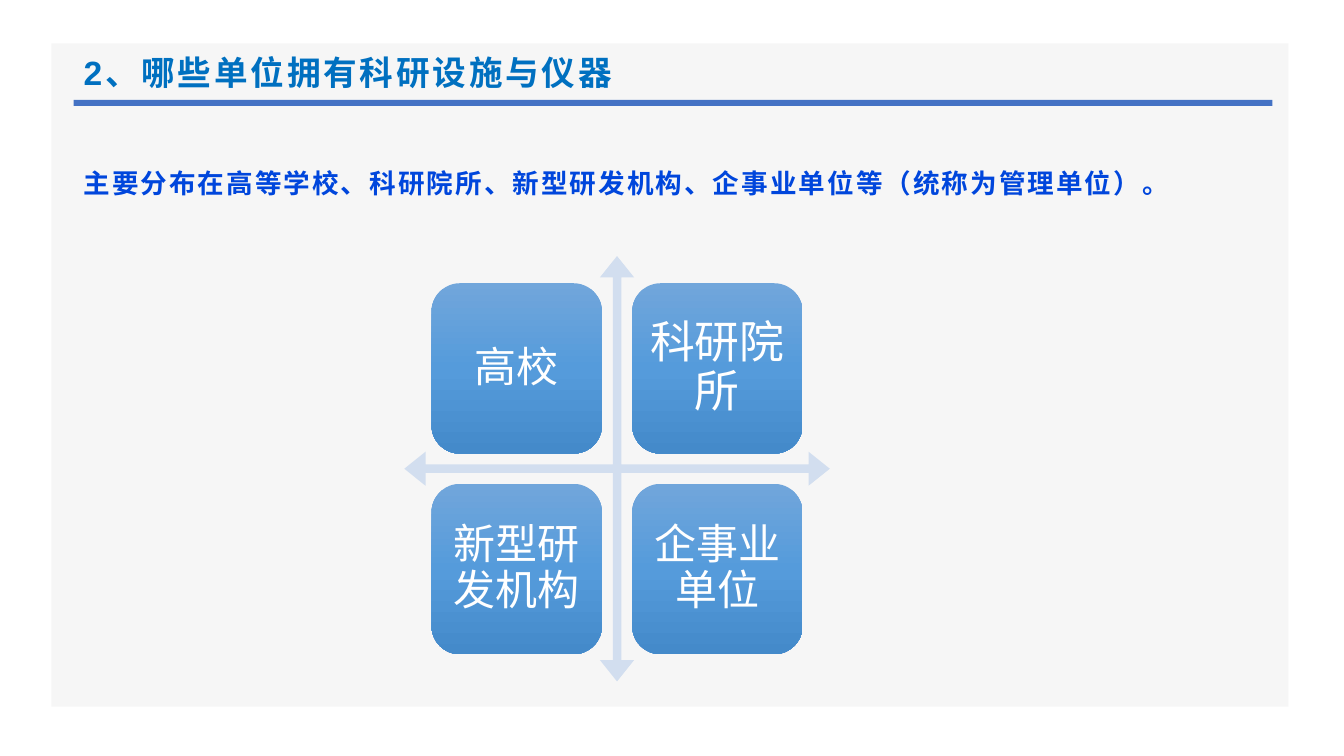
from copy import deepcopy

from pptx import Presentation
from pptx.dml.color import RGBColor
from pptx.enum.shapes import MSO_SHAPE
from pptx.enum.text import MSO_ANCHOR, MSO_AUTO_SIZE, PP_ALIGN
from pptx.oxml.ns import qn
from pptx.util import Inches, Pt


def add_run(paragraph, text, size, color, font="Arial", bold=False, spacing=0):
    """Append a styled run; spacing is the letter spacing in points."""
    run = paragraph.add_run()
    run.text = text
    run.font.size = Pt(size)
    run.font.bold = bold
    run.font.name = font
    run.font.color.rgb = RGBColor.from_string(color)
    properties = run._r.get_or_add_rPr()
    properties.set("lang", "zh-CN")
    properties.set("spc", str(int(spacing * 100)))
    east_asian = properties.makeelement(qn("a:ea"), {"typeface": font})
    properties.find(qn("a:latin")).addnext(east_asian)


def add_plain_shape(kind, left, top, width, height, color):
    shape = slide.shapes.add_shape(
        kind, Inches(left), Inches(top), Inches(width), Inches(height))
    shape.shadow.inherit = False
    shape.fill.solid()
    shape.fill.fore_color.rgb = RGBColor.from_string(color)
    shape.line.fill.background()
    return shape


presentation = Presentation()
presentation.slide_width = Inches(13.33)
presentation.slide_height = Inches(7.5)
slide = presentation.slides.add_slide(presentation.slide_layouts[5])

# Background panel and title rule
add_plain_shape(MSO_SHAPE.RECTANGLE, 0.51, 0.43, 12.27, 6.58, "F6F6F6")
title_rule = add_plain_shape(MSO_SHAPE.RECTANGLE, 0.73, 0.99, 11.89, 0.06, "4472C4")

# Title, stacked in front of the panel
title = slide.shapes.title
title_rule._element.addnext(title._element)
title.left, title.top = Inches(0.73), Inches(0.48)
title.width, title.height = Inches(11.87), Inches(0.48)
title.text_frame.auto_size = MSO_AUTO_SIZE.NONE
title.text_frame.vertical_anchor = MSO_ANCHOR.MIDDLE
title_paragraph = title.text_frame.paragraphs[0]
title_paragraph.alignment = PP_ALIGN.LEFT
add_run(title_paragraph, "2、哪些单位拥有科研设施与仪器", 24, "0070C0", bold=True, spacing=2)

# Summary sentence
summary = slide.shapes.add_textbox(Inches(0.73), Inches(1.51), Inches(11.87), Inches(0.48))
summary.text_frame.word_wrap = True
summary_paragraph = summary.text_frame.paragraphs[0]
summary_paragraph.line_spacing = 1.3
summary_paragraph.space_after = Pt(10)
add_run(summary_paragraph, "主要分布在高等学校、科研院所、新型研发机构、企事业单位等（统称为管理单位）。",
        19, "0046DC", font="Noto Sans CJK SC", bold=True, spacing=1.5)

# Four-way arrow behind the tiles
cross = add_plain_shape(MSO_SHAPE.QUAD_ARROW, 4.01, 2.54, 4.22, 4.22, "D2DEEF")
for index, value in enumerate((0.02, 0.04, 0.05)):
    cross.adjustments[index] = value

# Two by two grid of institution tiles
TILE_SIZE = 1.69
TILE_STEP = 1.99
TILE_GRADIENT = ((0, "71A6DB"), (0.5, "559BDB"), (1, "448ACA"))
institutions = (("高校", 30), ("科研院所", 32), ("新型研发机构", 30), ("企事业单位", 30))

for index, (name, size) in enumerate(institutions):
    row, column = divmod(index, 2)
    tile = add_plain_shape(
        MSO_SHAPE.ROUNDED_RECTANGLE, 4.28 + column * TILE_STEP, 2.81 + row * TILE_STEP,
        TILE_SIZE, TILE_SIZE, "559BDB")
    tile.fill.gradient()
    tile.fill.gradient_angle = 270
    first_stop = tile._element.spPr.find(".//" + qn("a:gs"))
    first_stop.addnext(deepcopy(first_stop))
    for stop, (position, color) in zip(tile.fill.gradient_stops, TILE_GRADIENT):
        stop.position = position
        stop.color.rgb = RGBColor.from_string(color)

    frame = tile.text_frame
    frame.word_wrap = True
    frame.vertical_anchor = MSO_ANCHOR.MIDDLE
    frame.margin_left = frame.margin_right = Inches(0.04)
    frame.margin_top = frame.margin_bottom = Inches(0.04)
    paragraph = frame.paragraphs[0]
    paragraph.alignment = PP_ALIGN.CENTER
    paragraph.line_spacing = 0.9
    add_run(paragraph, name, size, "FFFFFF")

presentation.save("out.pptx")
